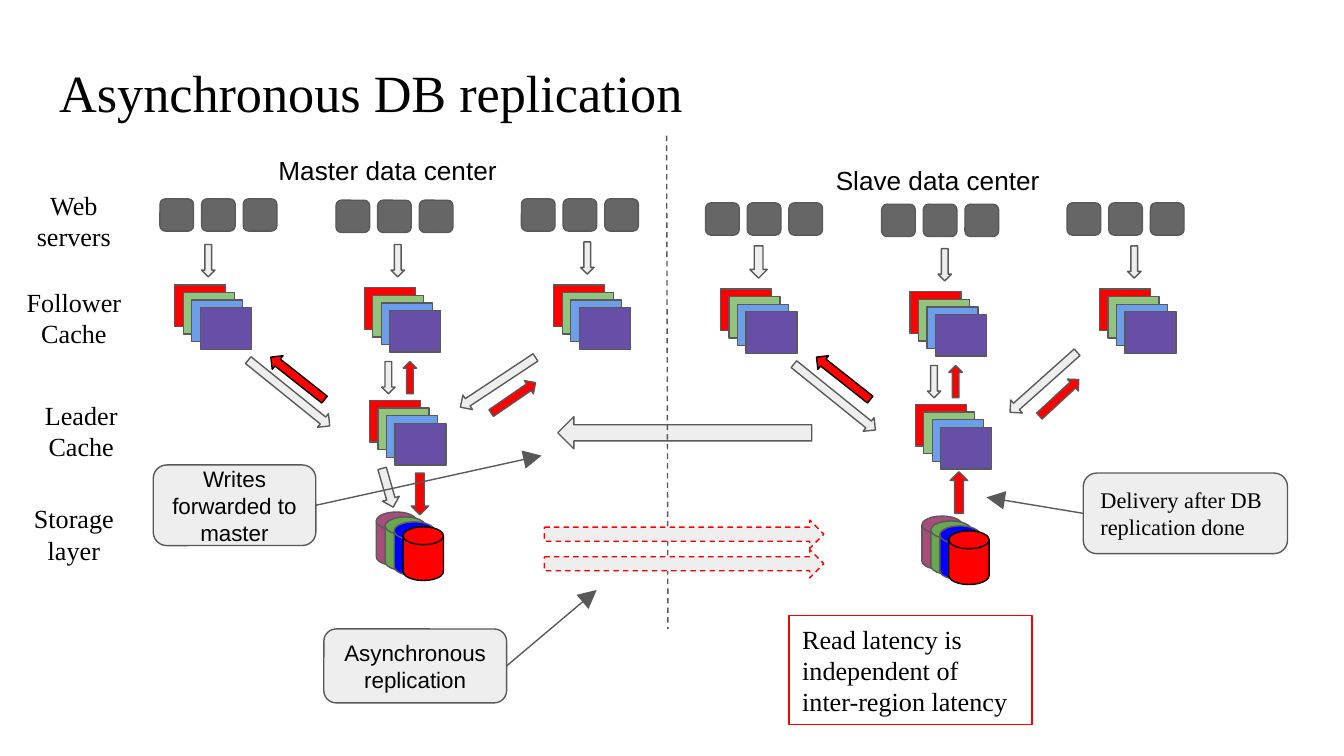
from lxml import etree
from pptx import Presentation
from pptx import util as u
from pptx.dml.color import RGBColor
from pptx.enum import dml, shapes, text
from pptx.oxml.ns import qn

SERIF, SANS = "Times New Roman", "Arial"
GRAY, PALE, RED, BLACK, WHITE = "595959", "EEEEEE", "FF0000", "000000", "FFFFFF"
SHAPE = shapes.MSO_SHAPE
LEFT, CENTER = text.PP_ALIGN.LEFT, text.PP_ALIGN.CENTER
CACHE_COLORS = (RED, "93C47D", "6D9EEB", "674EA7")
STORAGE_COLORS = ("A64D79", "6AA84F", "0000FF", RED)


def color(target, value):
    """Give a colour format a hex colour."""
    target.rgb = RGBColor.from_string(value)


def outline(line, value, dashed=False):
    """Style a thin outline or connector line."""
    color(line.color, value)
    line.width = u.Pt(0.75)
    if dashed:
        line.dash_style = dml.MSO_LINE.DASH


def add_part(slide, kind, box, fill, line=GRAY, turn=0, dashed=False):
    """Add a filled preset shape in the given box."""
    part = slide.shapes.add_shape(kind, *map(u.Inches, box))
    part.shadow.inherit = False
    part.fill.solid()
    color(part.fill.fore_color, fill)
    outline(part.line, line, dashed)
    part.rotation = turn
    return part


def write(holder, words, size, font, align, anchor):
    """Put one formatted paragraph into a shape."""
    frame = holder.text_frame
    frame.text = words
    frame.word_wrap = True
    frame.auto_size = text.MSO_AUTO_SIZE.NONE
    frame.vertical_anchor = anchor
    frame.margin_left = frame.margin_right = u.Inches(0.1)
    frame.margin_top = frame.margin_bottom = u.Inches(0.1)
    paragraph = frame.paragraphs[0]
    paragraph.alignment = align
    run = paragraph.runs[0]
    run.font.size = u.Pt(size)
    run.font.name = font
    color(run.font.color, BLACK)


def add_label(slide, box, words, font=SERIF, align=CENTER):
    """Add a plain text label."""
    label = slide.shapes.add_textbox(*map(u.Inches, box))
    write(label, words, 14, font, align, text.MSO_ANCHOR.TOP)


def add_line(slide, start, end, dashed=False):
    """Add a straight connector without a shadow."""
    line = slide.shapes.add_connector(
        shapes.MSO_CONNECTOR.STRAIGHT, *map(u.Inches, (*start, *end)))
    outline(line.line, GRAY, dashed)
    etree.SubElement(line._element.spPr, qn("a:effectLst"))
    return line


def add_title(slide, box):
    """Place and format the slide title."""
    title = slide.shapes.title
    title.left, title.top, title.width, title.height = map(u.Inches, box)
    write(title, "Asynchronous DB replication", 28, SERIF, LEFT, text.MSO_ANCHOR.TOP)


def add_stack(slide, kind, box, spread, fills, front_line=GRAY):
    """Overlap four equal shapes, the last one in front."""
    left, top, width, height = box
    last = len(fills) - 1
    for i, fill in enumerate(fills):
        place = (left + spread[0] * i / last, top + spread[1] * i / last, width, height)
        add_part(slide, kind, place, fill, front_line if i == last else GRAY)


def add_cache(slide, left, top):
    """Draw the shards of one cache."""
    add_stack(slide, SHAPE.RECTANGLE, (left, top, 0.38, 0.31), (0.19, 0.17), CACHE_COLORS)


def add_storage(slide, left, top):
    """Draw the shards of the storage layer."""
    add_stack(slide, SHAPE.FLOWCHART_MAGNETIC_DISK, (left, top, 0.3, 0.4),
              (0.2, 0.11), STORAGE_COLORS, BLACK)


def add_data_center(slide, left, top, server_arrows, fan_turn, storage_arrows):
    """Draw servers, caches, storage and the flows between them."""
    add_storage(slide, left + 1.61, top + 2.33)
    add_cache(slide, left + 1.56, top + 1.5)
    for web_x, cache_x, drop in ((0, 0.11, 0), (1.31, 1.52, 0.02), (2.69, 2.93, 0)):
        add_cache(slide, left + cache_x, top + 0.64 + drop)
        for i in range(3):
            server = (left + web_x + 0.31 * i, top + drop / 2, 0.25, 0.24)
            add_part(slide, SHAPE.ROUNDED_RECTANGLE, server, "666666")
    for x, y, width in server_arrows:
        add_part(slide, SHAPE.DOWN_ARROW, (left + x, top + y, width, 0.24), PALE)

    add_part(slide, SHAPE.RIGHT_ARROW, (left + 0.57, top + 1.38, 0.78, 0.13), PALE, turn=38.9)
    add_part(slide, SHAPE.RIGHT_ARROW, (left + 0.77, 2.75, 0.51, 0.13), RED, BLACK, 218.3)
    for box, fill, turn in (
        ((left + 1.65, top + 1.21, 0.1, 0.24), PALE, 0),
        ((left + 1.81, top + 1.21, 0.1, 0.24), RED, 180),
        ((left + 2.45, 2.51, 0.13, 0.67), PALE, fan_turn),
        ((left + 2.57, 2.76, 0.12, 0.4), RED, fan_turn + 179),
    ):
        add_part(slide, SHAPE.DOWN_ARROW, box, fill, turn=turn)
    for x, y, height, fill, turn in storage_arrows:
        add_part(slide, SHAPE.DOWN_ARROW, (left + x, top + y, 0.13, height), fill, turn=turn)


def add_callout(slide, box, words, font, align, site, tip):
    """Add a rounded note with an arrow from one side to its tip."""
    note = add_part(slide, SHAPE.ROUNDED_RECTANGLE, box, PALE)
    write(note, words, 12, font, align, text.MSO_ANCHOR.MIDDLE)
    pointer = add_line(slide, box[:2], tip)
    pointer.begin_connect(note, site)
    properties = pointer.line._get_or_add_ln()
    etree.SubElement(properties, qn("a:tailEnd"), type="triangle", w="lg", len="lg")


def add_exchange(slide, left, top):
    """Draw the border between the centers and the traffic across it."""
    add_part(slide, SHAPE.RIGHT_ARROW, (left + 0.1, top + 2.09, 1.89, 0.24), PALE, turn=180)
    add_line(slide, (left + 0.91, top), (left + 0.92, top + 3.67), dashed=True)
    for i in range(2):
        add_part(slide, SHAPE.RIGHT_ARROW, (left, top + 2.86 + 0.22 * i, 2.08, 0.21),
                 PALE, RED, dashed=True)


def add_layer_labels(slide):
    """Name the layers along the left edge."""
    for words, left, top, width in (
        ("Web servers", 0.01, 1.31, 1.08),
        ("Follower Cache", -0.11, 2.03, 1.32),
        ("Leader Cache", 0.04, 2.87, 1.13),
        ("Storage layer", 0.01, 3.64, 1.08),
    ):
        add_label(slide, (left, top, width, 0.36), words)


def main():
    """Build the slide."""
    deck = Presentation()
    deck.slide_width, deck.slide_height = u.Inches(10), u.Inches(10 * 9 / 16)
    slide = deck.slides.add_slide(deck.slide_layouts[5])
    add_title(slide, (0.34, 0.35, 9.32, 0.61))

    add_data_center(slide, 1.19, 1.48,
                    ((0.31, 0.34, 0.1), (1.72, 0.34, 0.1), (3.13, 0.32, 0.1)), 56.5,
                    ((1.63, 2, 0.3, PALE, 344), (1.87, 2.04, 0.31, RED, 0)))
    add_data_center(slide, 5.25, 1.51,
                    ((0.33, 0.32, 0.13), (1.73, 0.34, 0.1), (3.14, 0.32, 0.1)), 48.2,
                    ((1.82, 2, 0.31, RED, 180),))
    add_exchange(slide, 4.05, 1.01)

    add_label(slide, (1.77, 1.05, 2.23, 0.39), "Master data center", SANS)
    add_label(slide, (6.12, 1.12, 1.89, 0.36), "Slave data center", SANS, LEFT)
    add_callout(slide, (1.14, 3.46, 1.21, 0.6), "Writes forwarded to master",
                SANS, CENTER, 3, (4.03, 3.39))
    add_callout(slide, (2.41, 4.68, 1.36, 0.55), "Asynchronous replication",
                SANS, CENTER, 3, (4.44, 4.39))
    takeaway = add_part(slide, SHAPE.RECTANGLE, (5.87, 4.58, 1.81, 0.81), WHITE, RED)
    write(takeaway, "Read latency is independent of inter-region latency",
          14, SERIF, LEFT, text.MSO_ANCHOR.MIDDLE)
    add_callout(slide, (8.06, 3.52, 1.52, 0.6), "Delivery after DB replication done",
                SERIF, LEFT, 1, (7.34, 3.7))
    add_layer_labels(slide)
    deck.save("out.pptx")


if __name__ == "__main__":
    main()
